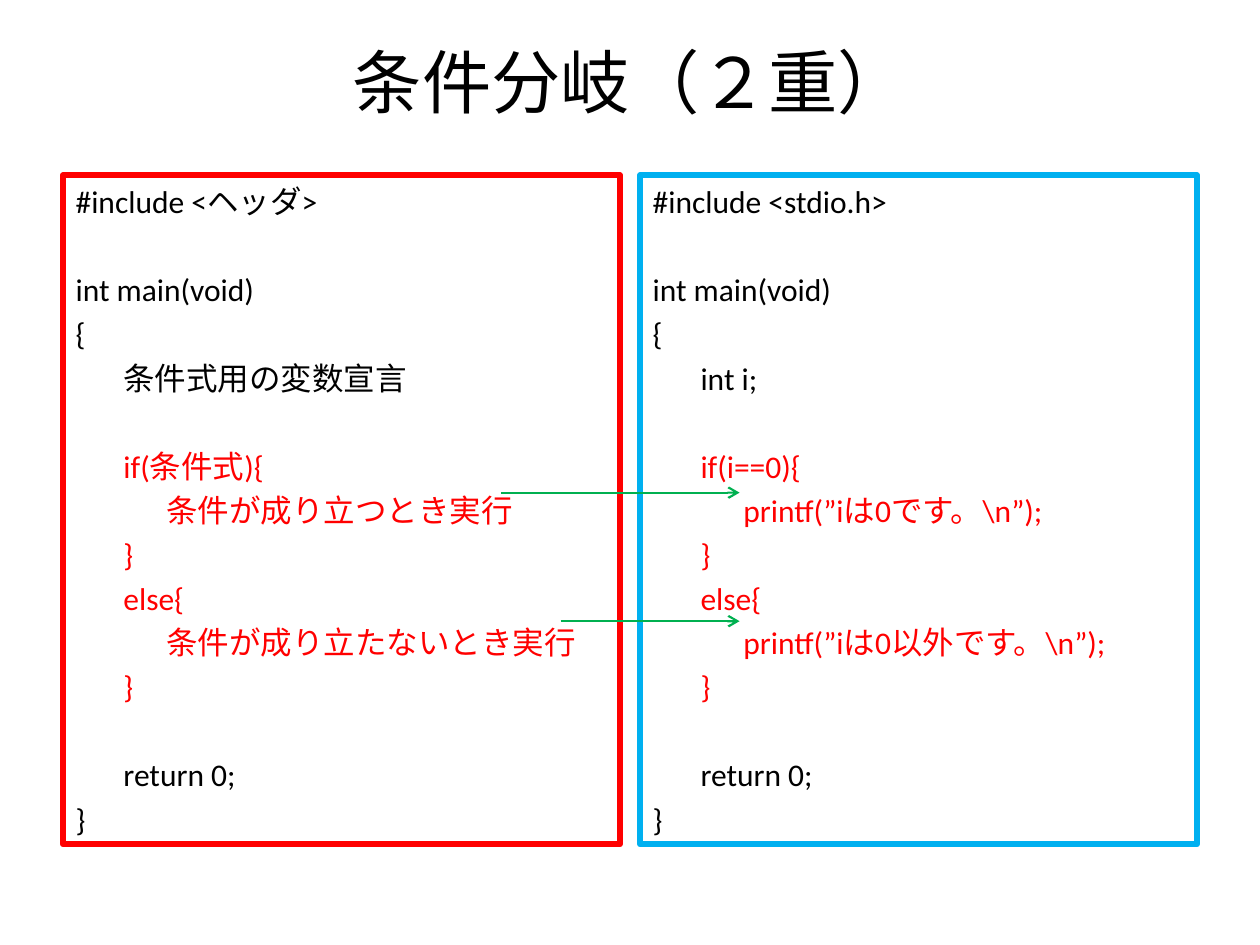
"""Build the slide that sets a nested-branch template beside its C example."""
from lxml.etree import SubElement
from pptx import Presentation
from pptx.dml.color import RGBColor
from pptx.enum.shapes import MSO_CONNECTOR
from pptx.enum.text import MSO_ANCHOR, MSO_AUTO_SIZE, PP_ALIGN
from pptx.oxml.ns import qn
from pptx.util import Inches, Pt

TITLE = "条件分岐（２重）"


def program(header, declaration, condition, when_true, when_false):
    """Return code blocks; each line is (indent level, text, colour name)."""
    return [
        [(0, f"#include <{header}>", "text")],
        [(0, "int main(void)", "text"), (0, "{", "text"),
         (1, declaration, "text")],
        [(1, f"if({condition}){{", "branch"), (2, when_true, "branch"),
         (1, "}", "branch"), (1, "else{", "branch"),
         (2, when_false, "branch"), (1, "}", "branch")],
        [(1, "return 0;", "text"), (0, "}", "text")],
    ]


PANELS = [
    ("template", program("ヘッダ", "条件式用の変数宣言", "条件式",
                         "条件が成り立つとき実行", "条件が成り立たないとき実行")),
    ("example", program("stdio.h", "int i;", "i==0",
                        r"printf(”iは0です。\n”);", r"printf(”iは0以外です。\n”);")),
]
ARROWS = [(4.45, 4.93), (3.98, 3.91)]
ARROW_END = 5.87

THEME = {
    "font": "Calibri", "title_size": 39.6, "code_size": 18,
    "line_height": 22, "line_gap": 3.2, "border": 3.5, "arrow_width": 1.25,
    "text": "000000", "branch": "FF0000", "template": "FF0000",
    "example": "00B0F0", "arrow": "00B050",
}
MARGIN, PANEL_TOP, PANEL_WIDTH, PANEL_HEIGHT, PANEL_GAP = 0.5, 1.39, 4.42, 5.31, 0.16
INDENTS = [0, 0.38, 0.72]


def colour(name):
    return RGBColor.from_string(THEME[name])


def write(paragraph, text, size, ink="text", align=PP_ALIGN.LEFT,
          indent=0, before=0, height=None):
    paragraph.alignment = align
    paragraph.space_before = Pt(before)
    if height:
        paragraph.line_spacing = Pt(height)
    properties = paragraph._p.get_or_add_pPr()
    properties.set("marL", str(Inches(indent)))
    properties.set("indent", "0")
    SubElement(properties, qn("a:buNone"))
    run = paragraph.add_run()
    run.text = text
    run.font.name = THEME["font"]
    run.font.size = Pt(size)
    run.font.color.rgb = colour(ink)
    SubElement(run._r.get_or_add_rPr(), qn("a:ea"), typeface=THEME["font"])


def place(placeholder, left, top, width, height, anchor):
    placeholder.left, placeholder.top = Inches(left), Inches(top)
    placeholder.width, placeholder.height = Inches(width), Inches(height)
    frame = placeholder.text_frame
    frame.word_wrap = True
    frame.auto_size = MSO_AUTO_SIZE.NONE
    frame.vertical_anchor = anchor
    return frame


def fill_panel(panel, left, border, blocks):
    frame = place(panel, left, PANEL_TOP, PANEL_WIDTH, PANEL_HEIGHT, MSO_ANCHOR.TOP)
    frame.margin_right = 0
    panel.line.color.rgb = colour(border)
    panel.line.width = Pt(THEME["border"])
    height, gap = THEME["line_height"], THEME["line_gap"]
    for block_index, block in enumerate(blocks):
        for line_index, (level, text, ink) in enumerate(block):
            first = block_index == line_index == 0
            paragraph = frame.paragraphs[0] if first else frame.add_paragraph()
            opens_block = line_index == 0 and not first
            before = 0 if first else gap + opens_block * (height + gap)
            write(paragraph, text, THEME["code_size"], ink=ink,
                  indent=INDENTS[level], before=before, height=height)


def add_arrow(slide, start, y):
    arrow = slide.shapes.add_connector(
        MSO_CONNECTOR.STRAIGHT, Inches(start), Inches(y), Inches(ARROW_END), Inches(y))
    arrow.line.color.rgb = colour("arrow")
    arrow.line.width = Pt(THEME["arrow_width"])
    SubElement(arrow.line._get_or_add_ln(), qn("a:tailEnd"), type="arrow")
    SubElement(arrow._element.spPr, qn("a:effectLst"))


def main():
    deck = Presentation()
    deck.slide_width, deck.slide_height = Inches(10), Inches(7.5)
    slide = deck.slides.add_slide(deck.slide_layouts[3])
    title, *bodies = slide.placeholders
    heading = place(title, MARGIN, 0.3, 9, 0.69, MSO_ANCHOR.MIDDLE)
    write(heading.paragraphs[0], TITLE, THEME["title_size"], align=PP_ALIGN.CENTER)
    for column, (body, (border, blocks)) in enumerate(zip(bodies, PANELS)):
        left = MARGIN + column * (PANEL_WIDTH + PANEL_GAP)
        fill_panel(body, left, border, blocks)
    for start, y in ARROWS:
        add_arrow(slide, start, y)
    deck.save("out.pptx")


if __name__ == "__main__":
    main()
